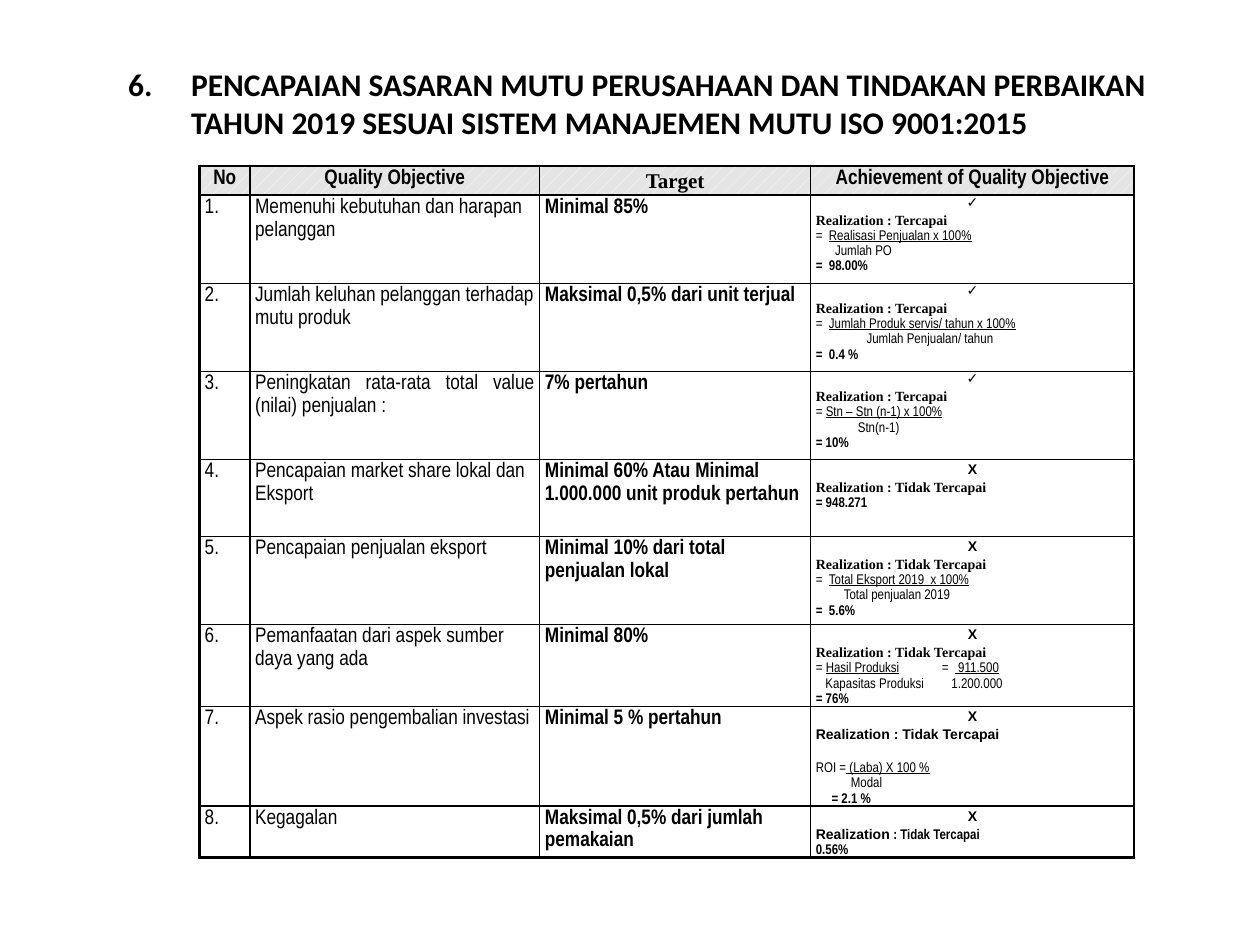
"""Builds the slide on quality objectives and their achievement."""
import dataclasses

import lxml.etree
import pptx
import pptx.dml.color
import pptx.enum.dml
import pptx.enum.text
import pptx.oxml.ns
import pptx.util

Pt = pptx.util.Pt
Align = pptx.enum.text.PP_ALIGN
RGB = pptx.dml.color.RGBColor.from_string
qn = pptx.oxml.ns.qn


@dataclasses.dataclass(frozen=True)
class Theme:
    ink: str = "000000"
    paper: str = "FFFFFF"
    shade: str = "E5E5E5"
    head: str = "Calibri"
    body: str = "Arial Narrow"
    sans: str = "Arial"
    serif: str = "Times New Roman"
    large: float = 18
    mid: float = 12
    small: float = 8
    thin: float = 1
    thick: float = 1.5
    lead: float = 1.15


def node(parent, tag, **attrs):
    item = lxml.etree.SubElement(parent, qn(tag))
    for name, value in attrs.items():
        item.set(name, str(value))
    return item


class Deck:
    def __init__(self, theme):
        self.theme = theme
        self.file = pptx.Presentation()
        self.file.slide_width, self.file.slide_height = Pt(720), Pt(540)
        self.slide = self.file.slides.add_slide(self.file.slide_layouts[5])

    def style(self, run, size, font, bold=False, under=False):
        run.font.size, run.font.name = Pt(size), font
        run.font.bold, run.font.underline = bold, under
        run.font.color.rgb = RGB(self.theme.ink)

    def title(self, text, start, box):
        shape = self.slide.shapes.title
        shape.left, shape.top, shape.width, shape.height = map(Pt, box)
        frame = shape.text_frame
        frame.text = text
        frame.auto_size = pptx.enum.text.MSO_AUTO_SIZE.NONE
        frame.vertical_anchor = pptx.enum.text.MSO_ANCHOR.MIDDLE
        para = frame.paragraphs[0]
        para.alignment = Align.LEFT
        props = para._p.get_or_add_pPr()
        props.set("marL", str(Pt(36)))
        props.set("indent", str(Pt(-36)))
        node(props, "a:buAutoNum", type="arabicPeriod", startAt=start)
        self.style(para.runs[0], self.theme.large, self.theme.head, True)

    def grid(self, spot, cols, rows):
        frame = self.slide.shapes.add_table(
            len(rows), len(cols), *map(Pt, (*spot, sum(cols), sum(rows))))
        table = frame.table
        table.first_row = table.horz_banding = False
        for col, width in zip(table.columns, cols):
            col.width = Pt(width)
        for row, height in zip(table.rows, rows):
            row.height = Pt(height)
        for r in range(len(rows)):
            for c in range(len(cols)):
                edge = {"L": c == 0, "R": c == len(cols) - 1,
                        "T": r == 0, "B": r == len(rows) - 1}
                self.frame(table.cell(r, c), edge, r == 0)
        return table

    def frame(self, cell, edge, top):
        cell.margin_left = cell.margin_right = Pt(3)
        cell.margin_top = cell.margin_bottom = 0
        props = cell._tc.get_or_add_tcPr()
        for side, outer in edge.items():
            width = self.theme.thick if outer else self.theme.thin
            line = node(props, f"a:ln{side}", w=Pt(width))
            node(node(line, "a:solidFill"), "a:srgbClr", val=self.theme.ink)
        if top:
            cell.fill.patterned()
            cell.fill.pattern = pptx.enum.dml.MSO_PATTERN.PERCENT_10
            cell.fill.fore_color.rgb = RGB(self.theme.paper)
            cell.fill.back_color.rgb = RGB(self.theme.shade)
        else:
            cell.fill.background()

    def label(self, cell, text, bold=False, align=Align.LEFT, font=None):
        cell.text_frame.text = text
        para = cell.text_frame.paragraphs[0]
        para.alignment, para.line_spacing = align, self.theme.lead
        self.style(para.runs[0], self.theme.mid, font or self.theme.body, bold)

    def result(self, cell, met, verdict, lines, gap=0):
        """Fills a cell with a mark, a verdict, formula lines and a value."""
        look = self.theme
        mark = ("✓", look.body, False) if met else ("Χ", look.sans, True)
        paras = [[(*mark, False)], [(text, font, True, False) for text, font in verdict]]
        for i, (_, text) in enumerate(lines):
            last = i == len(lines) - 1
            paras.append([(part, look.body, last, n % 2 == 1)
                          for n, part in enumerate(text.split("|"))])
        frame = cell.text_frame
        for i, runs in enumerate(paras):
            para = frame.add_paragraph() if i else frame.paragraphs[0]
            para.alignment = Align.LEFT if i else Align.CENTER
            para.line_spacing = look.lead
            props = para._p.get_or_add_pPr()
            if i == 2 and gap:
                para.space_before = Pt(gap)
            if i > 1:
                props.set("marL", str(Pt(lines[i - 2][0])))
                props.set("indent", "0")
            if any("\t" in run[0] for run in runs):
                tabs = node(props, "a:tabLst")
                for stop in (75, 82):
                    node(tabs, "a:tab", pos=Pt(stop), algn="l")
            for text, font, bold, under in runs:
                run = para.add_run()
                run.text = text
                self.style(run, look.small, font, bold, under)


LOOK = Theme()
YES = [("Realization : Tercapai", LOOK.serif)]
NOT = "Realization : Tidak Tercapai"
NO = [(NOT, LOOK.serif)]
GOALS = [
    ("Memenuhi kebutuhan dan harapan pelanggan", "Minimal 85%", True, YES,
     [(0, "=  |Realisasi Penjualan x 100%"), (11, "Jumlah PO"), (0, "=  98.00%")]),
    ("Jumlah keluhan pelanggan terhadap mutu produk",
     "Maksimal 0,5% dari unit terjual", True, YES,
     [(0, "=  |Jumlah Produk servis/ tahun x 100%"),
      (29, "Jumlah Penjualan/ tahun"), (0, "=  0.4 %")]),
    ("Peningkatan rata-rata total value (nilai) penjualan :", "7% pertahun", True, YES,
     [(0, "= |Stn – Stn (n-1) x 100%"), (24, "Stn(n-1)"), (0, "= 10%")]),
    ("Pencapaian market share lokal dan Eksport",
     "Minimal 60% Atau Minimal 1.000.000 unit produk pertahun", False, NO,
     [(0, "= 948.271")]),
    ("Pencapaian penjualan eksport", "Minimal 10% dari total penjualan lokal", False, NO,
     [(0, "=  |Total Eksport 2019  x 100%"), (16, "Total penjualan 2019"), (0, "=  5.6%")]),
    ("Pemanfaatan dari aspek sumber daya yang ada", "Minimal 80%", False, NO,
     [(0, "= |Hasil Produksi|\t=  | 911.500"),
      (5.5, "Kapasitas Produksi\t1.200.000"), (0, "= 76%")]),
    ("Aspek rasio pengembalian investasi", "Minimal 5 % pertahun", False,
     [(NOT, LOOK.sans)],
     [(0, "ROI =| (Laba) X 100 %"), (20, "Modal"), (9, "= 2.1 %")], 10),
    ("Kegagalan", "Maksimal 0,5% dari jumlah pemakaian", False,
     [("Realization", LOOK.sans), (" : Tidak Tercapai", LOOK.body)], [(0, "0.56%")]),
]


def main():
    deck = Deck(LOOK)
    deck.title("PENCAPAIAN SASARAN MUTU PERUSAHAAN DAN TINDAKAN PERBAIKAN "
               "TAHUN 2019 SESUAI SISTEM MANAJEMEN MUTU ISO 9001:2015",
               6, (66, 21.6, 618, 74))
    table = deck.grid((114, 95), (28.8, 165.6, 154.8, 185),
                      (16.5, 50.4, 50.4, 50.4, 43.9, 50.4, 46.8, 55.4, 28))
    heads = ("No", "Quality Objective", "Target", "Achievement of Quality Objective")
    for c, text in enumerate(heads):
        font = LOOK.serif if text == "Target" else LOOK.body
        deck.label(table.cell(0, c), text, True, Align.CENTER, font)
    for r, (goal, target, *result) in enumerate(GOALS, 1):
        deck.label(table.cell(r, 0), f"{r}.")
        deck.label(table.cell(r, 1), goal, align=Align.JUSTIFY if r == 3 else Align.LEFT)
        deck.label(table.cell(r, 2), target, True)
        deck.result(table.cell(r, 3), *result)
    deck.file.save("out.pptx")


if __name__ == "__main__":
    main()
